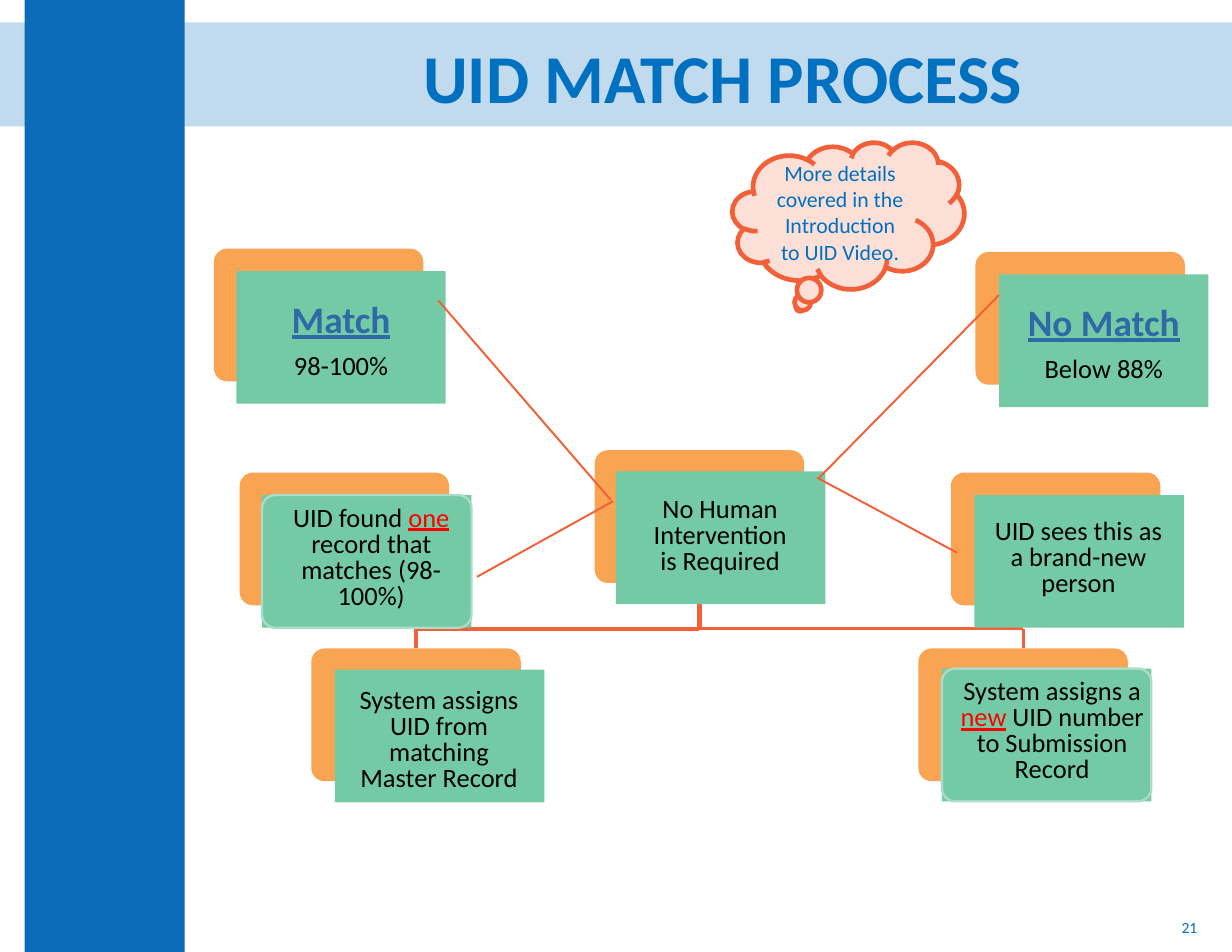
from pptx import Presentation
from pptx.dml.color import RGBColor
from pptx.enum.shapes import MSO_CONNECTOR, MSO_SHAPE as Shape
from pptx.enum.text import MSO_ANCHOR as Anchor, PP_ALIGN as Align
from pptx.oxml.ns import qn
from pptx.util import Inches, Pt
from lxml.etree import SubElement

COLORS = {
    "band": "C2DAED", "bar": "0D6CB9", "title": "0070C0", "back": "F9A452",
    "front": "75CAA6", "rim": "AADCC7", "link": "F16038", "cloud": "FCDFD7",
    "heading": "2E6AA6", "body": "000000", "key": "FF0000",
}
# Text styles: size, colour, bold, underline
STYLES = {
    "title": (44, "title", True, False),
    "heading": (24, "heading", True, True),
    "body": (17, "body", False, False),
    "key": (17, "key", False, True),
    "note": (14, "title", False, False),
    "number": (10, "title", False, False),
}
COLS, ROWS = 110, 85
CARD_W, CARD_H = 18.7, 11.85
TIGHT = 0.82

# Name: back corner, front corner, text box, line spacing, paragraphs of runs
CARDS = {
    "match": ((19.1, 22.2), (21.1, 24.2), (25.7, 26.4, 9.5, 7.7), 1,
              [[("Match", "heading")], [("98-100%", "body")]]),
    "no match": ((87.1, 22.5), (89.2, 24.5), (91.7, 26.7, 13.7, 7.7), 1,
                 [[("No Match", "heading")], [("Below 88%", "body")]]),
    "found one": ((21.4, 42.2), (23.4, 44.2), (26, 45.2, 14.3, 9.5), TIGHT,
                  [[("UID found ", "body"), ("one", "key"),
                    (" record that matches (98-", "body")], [("100%)", "body")]]),
    "no human": ((53.1, 40.2), (55, 42.1), (57.8, 44.4, 13, 7.3), TIGHT,
                 [[("No Human Intervention is Required", "body")]]),
    "brand-new": ((84.9, 42.2), (87, 44.2), (88, 46.4, 16.6, 7.3), TIGHT,
                  [[("UID sees this as a brand-new person", "body")]]),
    "from master": ((27.8, 57.9), (29.9, 59.8), (31.7, 61.5, 15, 9.4), TIGHT,
                    [[("System assigns UID from matching Master Record", "body")]]),
    "new number": ((82, 57.9), (84.1, 59.7), (85.3, 60.7, 17.3, 9.4), TIGHT,
                   [[("System assigns a ", "body"), ("new", "key"),
                     (" UID number to Submission Record", "body")]]),
}
RIMMED = ("found one", "new number")
SIDE_LINKS = [
    ((39.15, 26.85), (54.55, 44.65)), ((42.6, 51.5), (54.75, 44.75)),
    ((73.05, 42.75), (89.2, 26.35)), ((72.95, 42.65), (85.45, 49.35)),
]


class Canvas:
    """Draws on one slide; lengths are columns and rows of a COLS by ROWS grid."""

    def __init__(self, deck):
        self.slide = deck.slides.add_slide(deck.slide_layouts[6])
        self.shapes = self.slide.shapes
        self.col = deck.slide_width / COLS
        self.row = deck.slide_height / ROWS

    def area(self, x, y, w, h):
        return (round(x * self.col), round(y * self.row),
                round(w * self.col), round(h * self.row))

    def color(self, name):
        return RGBColor.from_string(COLORS[name])

    def block(self, area, fill=None, kind=Shape.RECTANGLE, line=None, width=1):
        block = self.shapes.add_shape(kind, *self.area(*area))
        block.shadow.inherit = False
        if fill:
            block.fill.solid()
            block.fill.fore_color.rgb = self.color(fill)
        else:
            block.fill.background()
        if line:
            block.line.color.rgb = self.color(line)
            block.line.width = Pt(width)
        else:
            block.line.fill.background()
        if kind == Shape.ROUNDED_RECTANGLE:
            block.adjustments[0] = 0.1
        return block

    def fill_text(self, frame, paragraphs, align=Align.CENTER, spacing=1):
        frame.word_wrap = True
        for i, runs in enumerate(paragraphs):
            paragraph = frame.add_paragraph() if i else frame.paragraphs[0]
            paragraph.alignment = align
            paragraph.line_spacing = spacing
            if i and spacing == 1:
                paragraph.space_before = Pt(5.6)
            for words, style in runs:
                run = paragraph.add_run()
                run.text = words
                size, color, bold, underline = STYLES[style]
                font = run.font
                font.name, font.size = "Calibri", Pt(size)
                font.bold, font.underline = bold, underline
                font.color.rgb = self.color(color)

    def text(self, area, paragraphs, align=Align.CENTER, spacing=1, anchor=Anchor.TOP):
        frame = self.shapes.add_textbox(*self.area(*area)).text_frame
        frame.margin_left = frame.margin_right = 0
        frame.margin_top = frame.margin_bottom = 0
        frame.vertical_anchor = anchor
        self.fill_text(frame, paragraphs, align, spacing)

    def link(self, start, end, width):
        ends = self.area(*start, *end)
        line = self.shapes.add_connector(MSO_CONNECTOR.STRAIGHT, *ends)
        line.line.color.rgb = self.color("link")
        line.line.width = Pt(width)
        SubElement(line._element.spPr, qn("a:effectLst"))
        return line

    def branch(self, parent, parent_at, child, child_at, width):
        """Lead from the parent's bottom to the child's top with two right angles."""
        x1, y1 = parent_at[0] + CARD_W / 2, parent_at[1] + CARD_H
        x2, y2 = child_at[0] + CARD_W / 2, child_at[1]
        bend = 56.15
        trunk = self.link((x1, y1), (x1, bend), width)
        trunk.begin_connect(parent, 2)
        self.link((x1, bend), (x2, bend), width)
        drop = self.link((x2, bend), (x2, y2), width)
        drop.end_connect(child, 0)


def main():
    deck = Presentation()
    deck.slide_width, deck.slide_height = Inches(11), Inches(8.5)
    canvas = Canvas(deck)

    canvas.block((0, 2, COLS, 9.3), "band")
    canvas.block((2.2, 0, 14.3, ROWS), "bar")
    canvas.text((37.8, 3.1, 60, 7.4), [[("UID MATCH PROCESS", "title")]],
                Align.LEFT, anchor=Anchor.MIDDLE)
    canvas.text((83.1, 80.5, 23.8, 4.5), [[("21", "number")]],
                Align.RIGHT, anchor=Anchor.MIDDLE)

    backs = {name: canvas.block((*card[0], CARD_W, CARD_H), "back",
                                Shape.ROUNDED_RECTANGLE)
             for name, card in CARDS.items()}
    for child, width in (("new number", 2), ("from master", 2.75)):
        canvas.branch(backs["no human"], CARDS["no human"][0],
                      backs[child], CARDS[child][0], width)

    for name, (_, corner, text_area, spacing, paragraphs) in CARDS.items():
        front = (*corner, CARD_W, CARD_H)
        canvas.block(front, "front")
        if name in RIMMED:
            canvas.block(front, None, Shape.ROUNDED_RECTANGLE, "rim", 1.5)
        canvas.text(text_area, paragraphs, spacing=spacing)

    for start, end in SIDE_LINKS:
        canvas.link(start, end, 1.25)

    cloud = canvas.block((65.4, 12.7, 20.7, 13.1), "cloud",
                         Shape.CLOUD_CALLOUT, "link", 3)
    cloud.text_frame.vertical_anchor = Anchor.MIDDLE
    canvas.fill_text(cloud.text_frame, [[
        ("More details covered in the Introduction to UID Video.", "note")]])

    deck.save("out.pptx")


if __name__ == "__main__":
    main()
